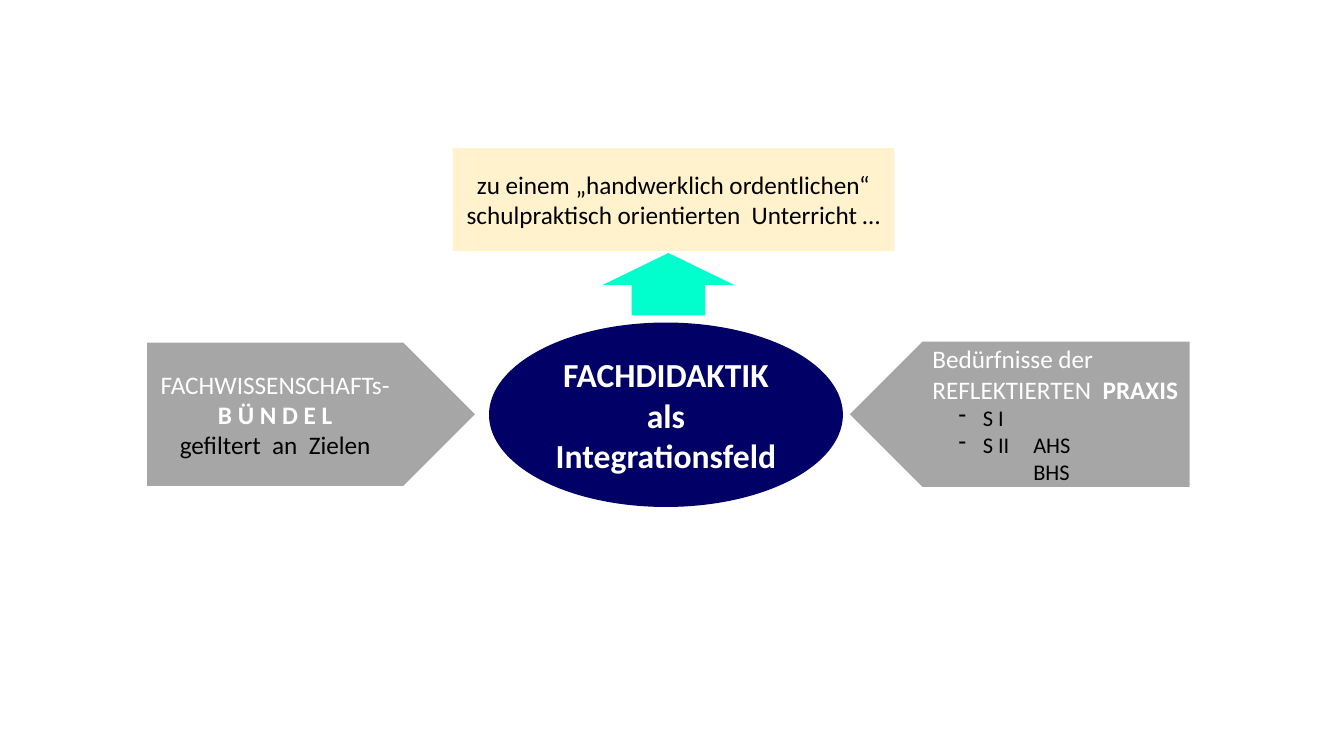
"""Build the slide on subject didactics as a field of integration."""
from dataclasses import dataclass

from lxml import etree
from pptx import Presentation
from pptx import util as u
from pptx.dml.color import RGBColor
from pptx.enum import shapes, text
from pptx.oxml.ns import qn

PX = 9144
FORM = shapes.MSO_SHAPE
LEFT, CENTER = text.PP_ALIGN.LEFT, text.PP_ALIGN.CENTER


@dataclass(frozen=True)
class Theme:
    font: str = "Calibri"
    core: str = "000066"
    source: str = "A6A6A6"
    rise: str = "00FFCC"
    goal: str = "FFF2CC"
    light: str = "FFFFFF"
    dark: str = "000000"
    title: int = 24
    body: int = 18
    detail: int = 16


class Sketch:
    def __init__(self, slide, theme):
        self.slide, self.theme = slide, theme

    def block(self, form, box, fill, adjust=()):
        block = self.slide.shapes.add_shape(form, *(u.Emu(n * PX) for n in box))
        block.shadow.inherit = False
        block.fill.solid()
        block.fill.fore_color.rgb = RGBColor.from_string(fill)
        block.line.fill.background()
        for i, value in enumerate(adjust):
            block.adjustments[i] = value
        block.text_frame.word_wrap = True
        block.text_frame.vertical_anchor = text.MSO_ANCHOR.MIDDLE
        return block

    def line(self, block, words, color, size, bold=False, align=CENTER,
             margin=0, hanging=0, bullet=None):
        frame = block.text_frame
        line = frame.paragraphs[0]
        if line.runs:
            line = frame.add_paragraph()
        line.alignment = align
        if margin:
            layout = line._p.get_or_add_pPr()
            layout.set("marL", str(margin * PX))
            layout.set("indent", str(-hanging * PX))
            if bullet:
                etree.SubElement(layout, qn("a:buChar")).set("char", bullet)
        line.font.name = self.theme.font
        line.font.size = u.Pt(size)
        line.font.bold = bold
        line.font.color.rgb = RGBColor.from_string(color)
        line.add_run().text = words
        return line


def main():
    deck = Presentation()
    deck.slide_width, deck.slide_height = u.Emu(1333 * PX), u.Emu(750 * PX)
    theme = Theme()
    sketch = Sketch(deck.slides.add_slide(deck.slide_layouts[6]), theme)

    science = sketch.block(FORM.RIGHT_ARROW, (146, 340, 325, 142), theme.source, (1, 0.5))
    sketch.line(science, "FACHWISSENSCHAFTs-", theme.light, theme.body)
    sketch.line(science, "B Ü N D E L", theme.light, theme.body, bold=True)
    sketch.line(science, "gefiltert  an  Zielen", theme.dark, theme.body)

    sketch.block(FORM.UP_ARROW, (598, 251, 130, 62), theme.rise, (0.56, 0.51))

    teaching = sketch.block(FORM.RECTANGLE, (449, 147, 438, 102), theme.goal)
    sketch.line(teaching, "zu einem „handwerklich ordentlichen“ "
                "schulpraktisch orientierten  Unterricht …", theme.dark, theme.body)

    practice = sketch.block(FORM.LEFT_ARROW, (843, 339, 337, 144), theme.source, (1, 0.5))
    sketch.line(practice, "Bedürfnisse der", theme.light, theme.body, align=LEFT)
    reflected = sketch.line(practice, "REFLEKTIERTEN", theme.light, theme.body, align=LEFT)
    emphasis = reflected.add_run()
    emphasis.text = "  PRAXIS"
    emphasis.font.bold = True
    for level in ("S I", "S II\tAHS"):
        sketch.line(practice, level, theme.dark, theme.detail, align=LEFT,
                    margin=50, hanging=24, bullet="-")
    sketch.line(practice, "BHS", theme.dark, theme.detail, align=LEFT, margin=100)

    didactics = sketch.block(FORM.OVAL, (485, 320, 351, 183), theme.core)
    for words in ("FACHDIDAKTIK", "als", "Integrationsfeld"):
        sketch.line(didactics, words, theme.light, theme.title, bold=True)

    deck.save("out.pptx")


if __name__ == "__main__":
    main()
